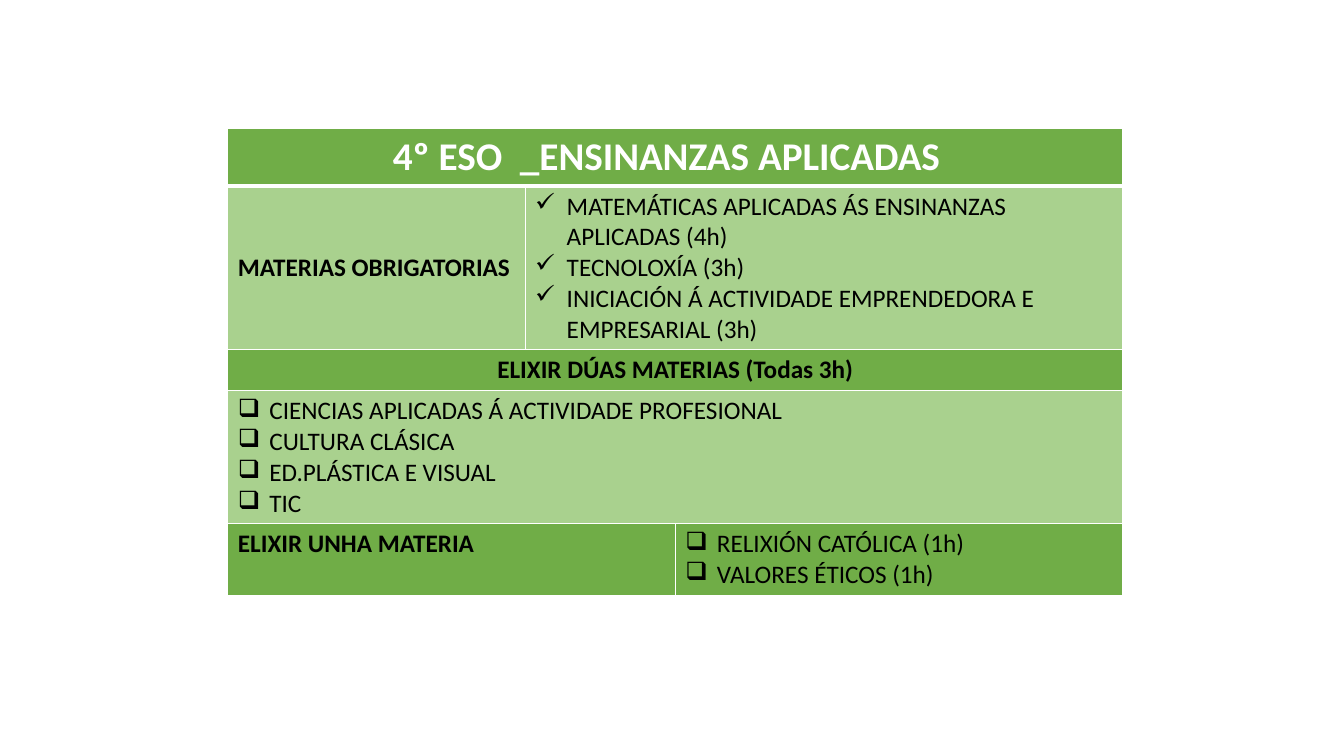
from lxml.etree import SubElement
from pptx import Presentation
from pptx.dml.color import RGBColor
from pptx.enum.text import MSO_ANCHOR, PP_ALIGN
from pptx.oxml.ns import qn
from pptx.util import Pt

WHITE = RGBColor(0xFF, 0xFF, 0xFF)
BLACK = RGBColor(0x00, 0x00, 0x00)
GREEN = RGBColor(0x70, 0xAD, 0x47)
LIGHT = RGBColor(0xA9, 0xD1, 0x8E)

WIDTHS = [212.4, 107.3, 319.7]
HEIGHTS = [41.4, 117, 29.2, 95, 51.2]
INDENT = 22.5

PLAIN = {"name": "Calibri", "size": Pt(18), "bold": False}
BOLD = {**PLAIN, "bold": True}
TITLE = {**BOLD, "size": Pt(28)}
CENTER = {"alignment": PP_ALIGN.CENTER}
MIDDLE = {"vertical_anchor": MSO_ANCHOR.MIDDLE}
SHIFT = {"margin_right": Pt(20)}


def apply(target, values):
    for name, value in values.items():
        setattr(target, name, value)


class Painter:
    def __init__(self, slide):
        self.slide = slide

    def table(self, left, top, widths, heights):
        frame = self.slide.shapes.add_table(
            len(heights), len(widths), Pt(left), Pt(top), Pt(sum(widths)), Pt(sum(heights)))
        grid = frame.table
        apply(grid, {"first_row": False, "horz_banding": False})
        for column, width in zip(grid.columns, widths):
            column.width = Pt(width)
        for row, height in zip(grid.rows, heights):
            row.height = Pt(height)
        return grid

    def border(self, cell, sides):
        props = cell._tc.get_or_add_tcPr()
        for side, width in sides.items():
            line = SubElement(props, qn(f"a:ln{side}"), w=str(Pt(width)))
            fill = SubElement(line, qn("a:solidFill"))
            SubElement(fill, qn("a:srgbClr"), val=str(WHITE))

    def bullet(self, para, mark):
        props = para._p.get_or_add_pPr()
        props.set("marL", str(Pt(INDENT)))
        props.set("indent", str(-Pt(INDENT)))
        SubElement(props, qn("a:buChar"), char=mark)

    def cell(self, grid, row, first, last, fill, lines, font,
             color=BLACK, mark=None, para_style={}, cell_style={}):
        sides = {"L": 1, "R": 1, "T": 3 if row == 1 else 1, "B": 3 if row == 0 else 1}
        for index in range(first, last + 1):
            part = grid.cell(row, index)
            self.border(part, sides)
            part.fill.solid()
            part.fill.fore_color.rgb = fill
        cell = grid.cell(row, first)
        if last > first:
            cell.merge(grid.cell(row, last))
        apply(cell, cell_style)
        frame = cell.text_frame
        for index, line in enumerate(lines):
            para = frame.add_paragraph() if index else frame.paragraphs[0]
            apply(para, para_style)
            if mark:
                self.bullet(para, mark)
            run = para.add_run()
            run.text = line
            apply(run.font, font)
            run.font.color.rgb = color


def main():
    deck = Presentation()
    apply(deck, {"slide_width": Pt(960), "slide_height": Pt(540)})
    paint = Painter(deck.slides.add_slide(deck.slide_layouts[6]))
    grid = paint.table(162.7, 91.4, WIDTHS, HEIGHTS)

    paint.cell(grid, 0, 0, 2, GREEN, ["4º ESO  _ENSINANZAS APLICADAS"], TITLE,
               color=WHITE, para_style=CENTER, cell_style=SHIFT)
    paint.cell(grid, 1, 0, 0, LIGHT, ["MATERIAS OBRIGATORIAS"], BOLD, cell_style=MIDDLE)
    paint.cell(grid, 1, 1, 2, LIGHT, [
        "MATEMÁTICAS APLICADAS ÁS ENSINANZAS APLICADAS (4h)",
        "TECNOLOXÍA (3h)",
        "INICIACIÓN Á ACTIVIDADE EMPRENDEDORA E EMPRESARIAL (3h)",
    ], PLAIN, mark="✓")
    paint.cell(grid, 2, 0, 2, GREEN, ["ELIXIR DÚAS MATERIAS (Todas 3h)"], BOLD,
               para_style=CENTER)
    paint.cell(grid, 3, 0, 2, LIGHT, [
        "CIENCIAS APLICADAS Á ACTIVIDADE PROFESIONAL",
        "CULTURA CLÁSICA",
        "ED.PLÁSTICA E VISUAL",
        "TIC",
    ], PLAIN, mark="❑")
    paint.cell(grid, 4, 0, 1, GREEN, ["ELIXIR UNHA MATERIA"], BOLD)
    paint.cell(grid, 4, 2, 2, GREEN, [
        "RELIXIÓN CATÓLICA (1h)",
        "VALORES ÉTICOS (1h)",
    ], PLAIN, mark="❑")

    deck.save("out.pptx")


if __name__ == "__main__":
    main()
